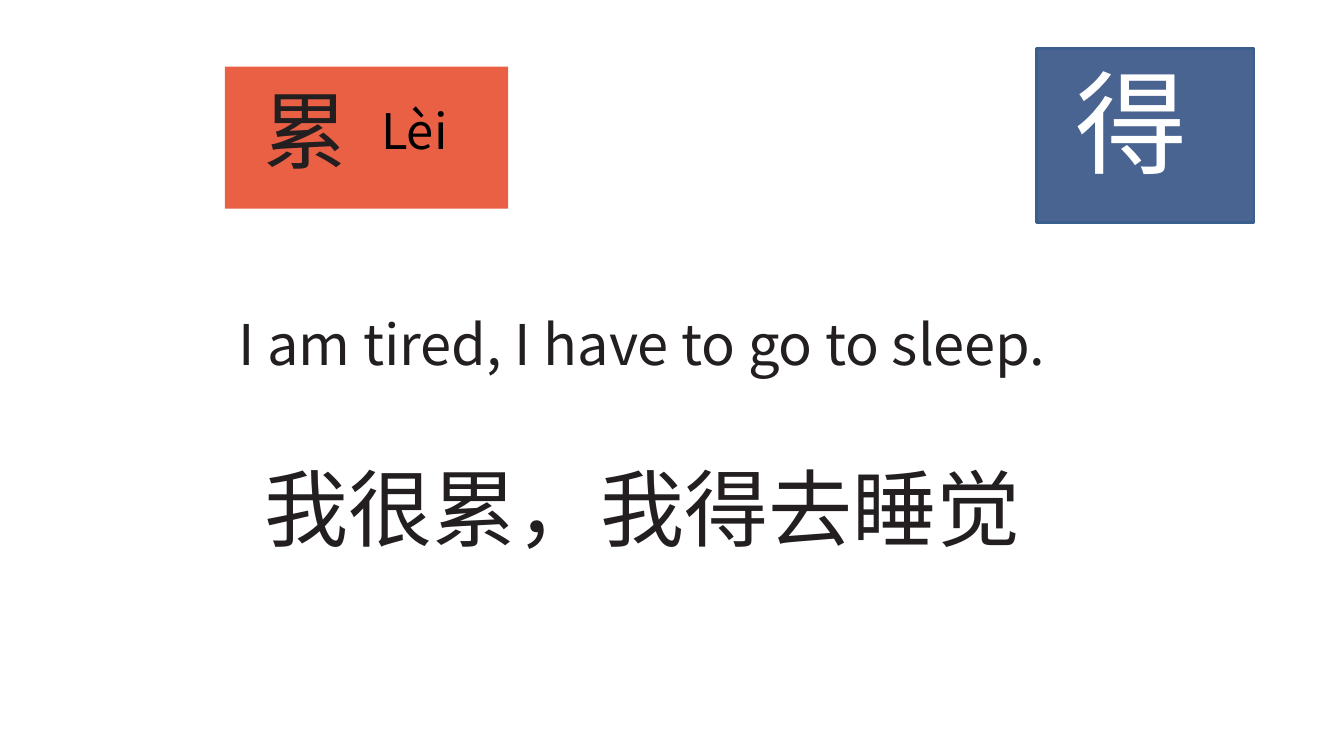
from lxml import etree
from pptx import Presentation
from pptx.dml.color import RGBColor
from pptx.enum.shapes import MSO_SHAPE
from pptx.enum.text import MSO_ANCHOR, MSO_AUTO_SIZE, PP_ALIGN
from pptx.oxml.ns import qn
from pptx.util import Pt

RECT = MSO_SHAPE.RECTANGLE
TOP = MSO_ANCHOR.TOP
NO_FIT = MSO_AUTO_SIZE.NONE
CENTER = PP_ALIGN.CENTER
TITLE_ONLY = 5


def color(code):
    return RGBColor.from_string(code)


class Card:
    """Style and current slide of a vocabulary card."""

    font = "Noto Sans CJK SC"
    ink = "231F20"
    lead = 36.7

    def __init__(self, deck):
        self.slide = deck.slides.add_slide(deck.slide_layouts[TITLE_ONLY])

    def box(self, x, y, w, h, fill, line=None):
        rect = self.slide.shapes.add_shape(RECT, Pt(x), Pt(y), Pt(w), Pt(h))
        rect.shadow.inherit = False
        rect.fill.solid()
        rect.fill.fore_color.rgb = color(fill)
        if line:
            rect.line.color.rgb = color(line)
            rect.line.width = Pt(2)
        else:
            rect.line.fill.background()

    def label(self, shape, text, size, ink):
        """Fill a text shape with one centred line."""
        frame = shape.text_frame
        frame.word_wrap = True
        frame.auto_size = NO_FIT
        frame.vertical_anchor = TOP
        frame.margin_left = frame.margin_right = 0
        frame.margin_top = frame.margin_bottom = 0
        para = frame.paragraphs[0]
        para.text = text
        para.alignment = CENTER
        para.line_spacing = Pt(self.lead)
        font = para.font
        font.name = self.font
        font.size = Pt(size)
        font.color.rgb = color(ink)
        latin = para._p.pPr.find(qn("a:defRPr")).find(qn("a:latin"))
        east = etree.Element(qn("a:ea"), typeface=self.font)
        latin.addnext(east)

    def title(self, x, y, w, h, text, size):
        shape = self.slide.shapes.title
        shape.left, shape.top = Pt(x), Pt(y)
        shape.width, shape.height = Pt(w), Pt(h)
        self.label(shape, text, size, self.ink)

    def text(self, x, y, w, h, text, size, ink=ink):
        shape = self.slide.shapes.add_textbox(Pt(x), Pt(y), Pt(w), Pt(h))
        self.label(shape, text, size, ink)


def main():
    deck = Presentation()
    deck.slide_width, deck.slide_height = Pt(960), Pt(540)
    card = Card(deck)

    card.box(160.6, 47.5, 202.3, 101.5, "EA6045")
    card.box(740.2, 34.6, 155.5, 124.6, "4A6491", "3A5F8C")
    card.text(735, 97.2, 146, 47.5, "得", 80, "FFFFFF")

    card.title(82.8, 232.6, 751.7, 37.4, "I am tired, I have to go to sleep.", 40)
    card.text(82.8, 361.4, 751.7, 42.5, "我很累，我得去睡觉", 60)

    card.text(168, 91.4, 100, 42.5, "累", 60)
    card.text(246, 77, 100, 42.5, "Lèi", 35, "000000")

    deck.save("out.pptx")


if __name__ == "__main__":
    main()
